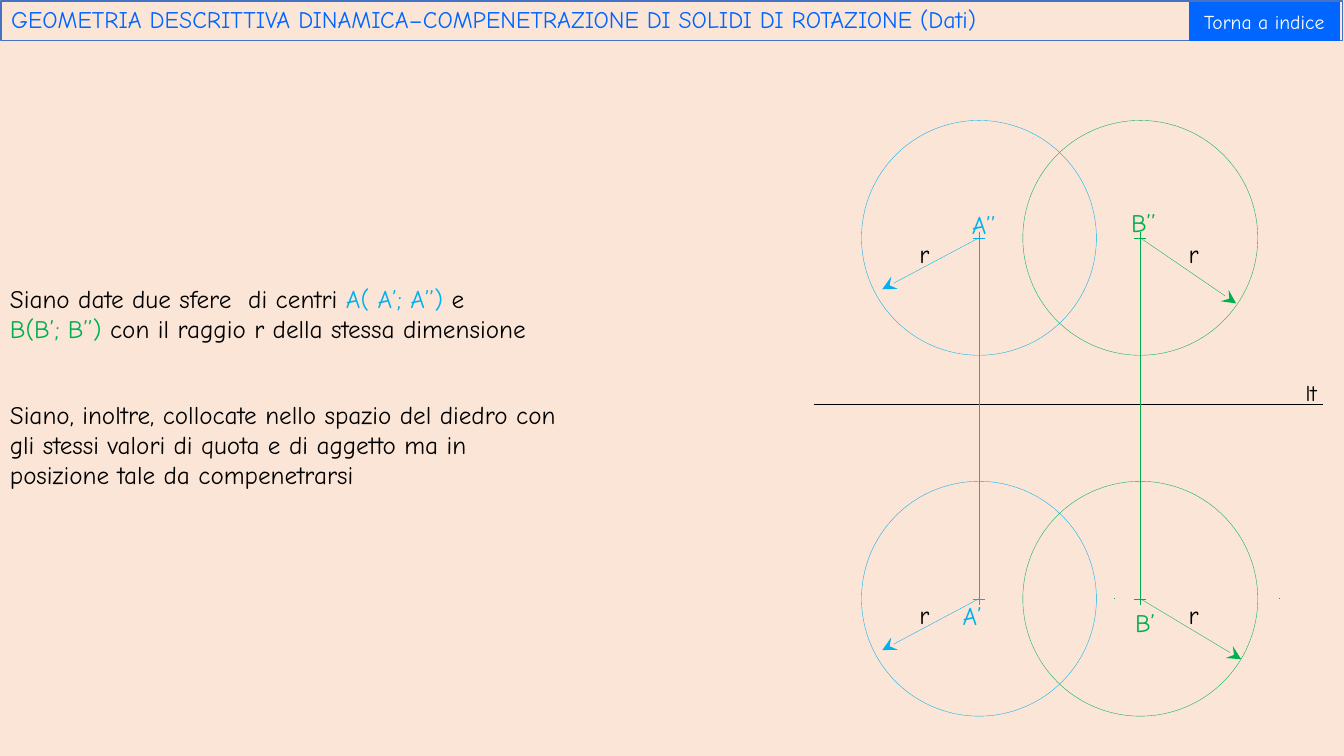
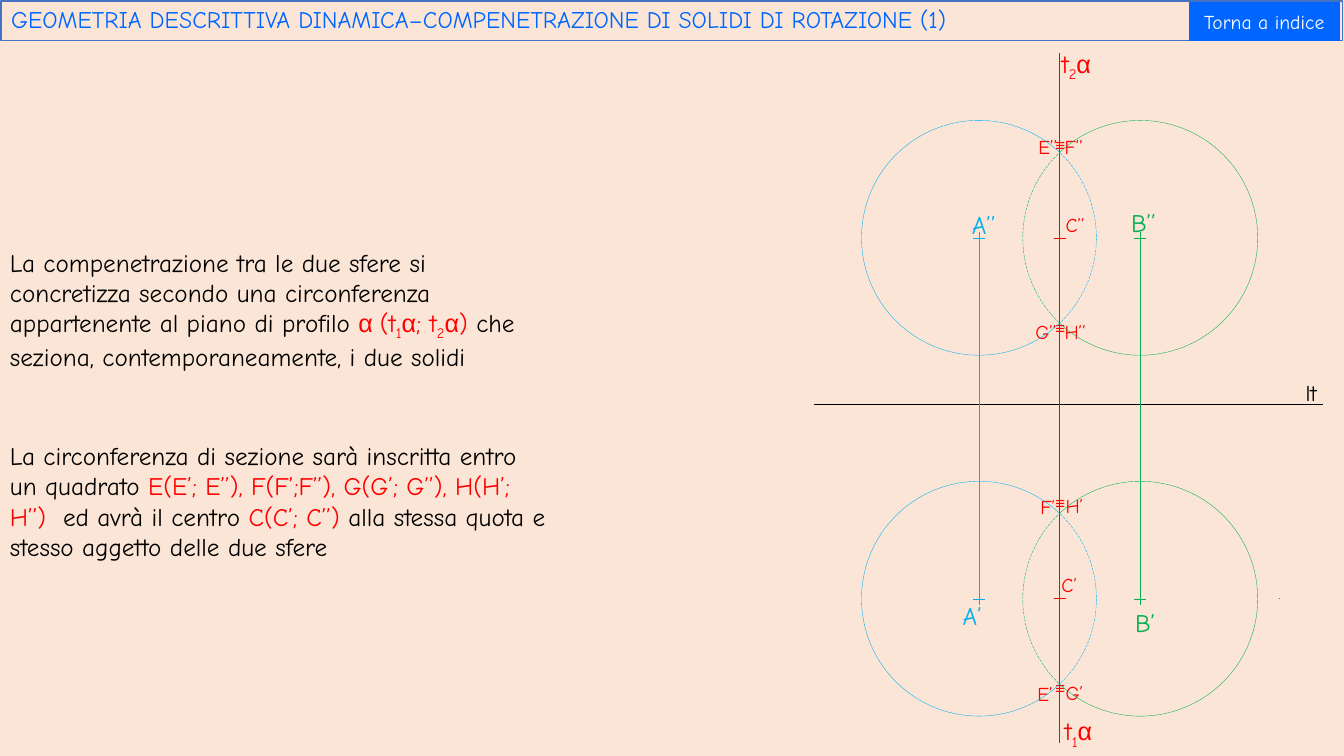
import lxml.etree
import pptx
import pptx.dml.color
import pptx.enum.dml
import pptx.enum.shapes
import pptx.enum.text
import pptx.oxml.ns
import pptx.util

Inches = pptx.util.Inches
SHAPES = pptx.enum.shapes.MSO_SHAPE
COLORS = {
    "paper": "FBE5D6", "ink": "000000", "white": "FFFFFF", "frame": "4472C4",
    "title": "0066FF", "sphere_a": "00B0F0", "sphere_b": "00B050", "section": "FF0000",
}
FONT = "Comic Neue"
SYMBOL_FONT = "Arial"
HEADING = "GEOMETRIA DESCRITTIVA DINAMICA–COMPENETRAZIONE DI SOLIDI DI ROTAZIONE ({})"

# The diagram is measured from its own left top corner.
DIAGRAM = (8, 0.4)
ROWS = {"elevation": 1.96, "plan": 5.54}
CENTERS = {"sphere_a": 1.71, "sphere_b": 3.31}
SECTION_X = 2.51
DIAMETER = 2.33
CHORD_HALF = 0.84
CHORD_ANGLE = 46
CENTER_LABELS = [
    ("A’’", "sphere_a", 1.54, 1.63), ("A’", "sphere_a", 1.45, 5.51),
    ("B’’", "sphere_b", 3.12, 1.61), ("B’", "sphere_b", 3.16, 5.58),
]
SECTION_LABELS = [
    ("E’’", 2.2, 0.89), ("F’’", 2.46, 0.89), ("G’’", 2.17, 2.72), ("H’’", 2.46, 2.72),
    ("F’", 2.22, 4.46), ("H’", 2.47, 4.45), ("E’", 2.19, 6.32), ("G’", 2.47, 6.31),
    ("C’’", 2.47, 1.66), ("C’", 2.43, 5.23),
]
RADII = [
    ("sphere_a", "elevation", -0.96, 0.51), ("sphere_a", "plan", -0.96, 0.51),
    ("sphere_b", "elevation", 0.95, 0.65), ("sphere_b", "plan", 1, 0.6),
]
RADIUS_LABEL_DX = {"sphere_a": -0.69, "sphere_b": 0.38}


def rgb(key):
    return pptx.dml.color.RGBColor.from_string(COLORS[key])


def write_runs(paragraph, runs, size=18, color="ink", font=FONT):
    """Write runs, each a string or a (text, format overrides) pair."""
    for item in runs:
        text, style = (item, {}) if isinstance(item, str) else item
        run = paragraph.add_run()
        run.text = text
        run.font.size = pptx.util.Pt(size)
        run.font.name = style.get("font", font)
        run.font.color.rgb = rgb(style.get("color", color))
        if style.get("subscript"):
            run._r.get_or_add_rPr().set("baseline", "-25000")


def add_text(slide, left, top, width, height, paragraphs, **style):
    box = slide.shapes.add_textbox(Inches(left), Inches(top), Inches(width), Inches(height))
    frame = box.text_frame
    frame.word_wrap = True
    frame.auto_size = pptx.enum.text.MSO_AUTO_SIZE.SHAPE_TO_FIT_TEXT
    for index, runs in enumerate(paragraphs):
        paragraph = frame.add_paragraph() if index else frame.paragraphs[0]
        write_runs(paragraph, runs, **style)


def add_line(slide, origin, start, end, color, width=0.25, arrow=False):
    """Draw a line between two points measured from origin."""
    points = [Inches(base + part) for point in (start, end) for base, part in zip(origin, point)]
    line = slide.shapes.add_connector(pptx.enum.shapes.MSO_CONNECTOR.STRAIGHT, *points)
    line.line.color.rgb = rgb(color)
    line.line.width = pptx.util.Pt(width)
    properties = line._element.spPr
    qn = pptx.oxml.ns.qn
    if arrow:
        lxml.etree.SubElement(properties.find(qn("a:ln")), qn("a:tailEnd"),
                              type="stealth", w="lg", len="lg")
    lxml.etree.SubElement(properties, qn("a:effectLst"))


def add_label(slide, origin, left, top, runs, width=0.54, height=0.4, **style):
    add_text(slide, origin[0] + left, origin[1] + top, width, height, [runs], **style)


def add_cross(slide, origin, x, y, color):
    arm = 0.06
    add_line(slide, origin, (x - arm, y), (x + arm, y), color)
    add_line(slide, origin, (x, y - arm), (x, y + arm), color)


def add_curve(slide, origin, x, y, color, angles=None, dashed=False):
    """Draw a circle centred on x, y, or its arc between two angles in degrees."""
    kind = SHAPES.ARC if angles else SHAPES.OVAL
    curve = slide.shapes.add_shape(
        kind, Inches(origin[0] + x - DIAMETER / 2), Inches(origin[1] + y - DIAMETER / 2),
        Inches(DIAMETER), Inches(DIAMETER))
    curve.shadow.inherit = False
    curve.fill.background()
    curve.line.color.rgb = rgb(color)
    curve.line.width = pptx.util.Pt(0.25)
    if dashed:
        curve.line.dash_style = pptx.enum.dml.MSO_LINE.LONG_DASH
    for index, angle in enumerate(angles or ()):
        curve.adjustments[index] = angle * 0.6


def add_projections(slide, origin):
    """Draw the ground line, the centres and the lines that join their projections."""
    add_line(slide, origin, (0.07, 3.61), (5.12, 3.61), "ink")
    add_label(slide, origin, 4.85, 3.31, ["lt"], width=0.48, height=0.37, size=16)
    add_line(slide, origin, (4.69, 5.54), (4.7, 5.54), "frame", width=0.5)
    for sphere, x in CENTERS.items():
        add_line(slide, origin, (x, ROWS["elevation"]), (x, ROWS["plan"]), sphere)
        for y in ROWS.values():
            add_cross(slide, origin, x, y, sphere)
    for text, sphere, left, top in CENTER_LABELS:
        add_label(slide, origin, left, top, [text], color=sphere)


def add_whole_spheres(slide, origin):
    for sphere, x in CENTERS.items():
        for y in ROWS.values():
            add_curve(slide, origin, x, y, sphere)
    for sphere, row, dx, dy in RADII:
        x, y = CENTERS[sphere], ROWS[row]
        add_line(slide, origin, (x, y), (x + dx, y + dy), sphere, arrow=True)
        add_label(slide, origin, x + RADIUS_LABEL_DX[sphere], y - 0.04, ["r"], width=0.33)
    add_line(slide, origin, (3.05, 5.54), (3.06, 5.54), "sphere_b", width=0.5)


def add_cut_spheres(slide, origin):
    """Draw each sphere with its hidden arc, inside the other one, dashed."""
    for sphere, facing in (("sphere_a", 0), ("sphere_b", 180)):
        near, far = facing - CHORD_ANGLE, facing + CHORD_ANGLE
        near, far = near % 360, far % 360
        for y in ROWS.values():
            add_curve(slide, origin, CENTERS[sphere], y, sphere, angles=(far, near))
            add_curve(slide, origin, CENTERS[sphere], y, sphere, angles=(near, far), dashed=True)


def plane_trace(number):
    return ["t", (number, {"subscript": True}), ("α", {"font": SYMBOL_FONT})]


def add_section_plane(slide, origin):
    add_line(slide, origin, (SECTION_X, 0.13), (SECTION_X, 6.97), "section")
    for number, left, top in (("1", 2.46, 6.65), ("2", 2.43, 0.03)):
        add_label(slide, origin, left, top, plane_trace(number), width=0.79, color="section")
    for y in ROWS.values():
        add_line(slide, origin, (SECTION_X, y - CHORD_HALF), (SECTION_X, y + CHORD_HALF),
                 "section", width=1)
        add_line(slide, origin, (SECTION_X - 0.06, y), (SECTION_X + 0.06, y),
                 "section", width=0.5)
    for text, left, top in SECTION_LABELS:
        add_label(slide, origin, left, top, [text], width=0.5, height=0.34,
                  size=14, color="section")
    for top in (0.89, 2.7, 4.44, 6.27):
        add_label(slide, origin, 2.37, top, ["≡"], width=0.34, height=0.3,
                  size=12, color="section", font=SYMBOL_FONT)


def place_heading(slide, step):
    title = slide.shapes.title
    title.left, title.top, title.width, title.height = map(Inches, (0.01, 0.01, 13.31, 0.39))
    title.line.color.rgb = rgb("frame")
    title.line.width = pptx.util.Pt(0.75)
    frame = title.text_frame
    frame.auto_size = pptx.enum.text.MSO_AUTO_SIZE.NONE
    frame.vertical_anchor = pptx.enum.text.MSO_ANCHOR.MIDDLE
    paragraph = frame.paragraphs[0]
    paragraph.alignment = pptx.enum.text.PP_ALIGN.LEFT
    paragraph.line_spacing = 0.9
    write_runs(paragraph, [HEADING.format(step)], size=17, color="title")


def add_index_button(slide):
    button = slide.shapes.add_shape(SHAPES.ACTION_BUTTON_CUSTOM, Inches(11.79), Inches(0.02),
                                    Inches(1.5), Inches(0.39))
    button.shadow.inherit = False
    button.fill.solid()
    button.fill.fore_color.rgb = rgb("title")
    button.line.fill.background()
    button.text_frame.vertical_anchor = pptx.enum.text.MSO_ANCHOR.MIDDLE
    paragraph = button.text_frame.paragraphs[0]
    paragraph.alignment = pptx.enum.text.PP_ALIGN.CENTER
    write_runs(paragraph, ["Torna a indice"], size=14, color="white")


def add_step(prs, step):
    """Add a slide with the shared heading, button and projections."""
    slide = prs.slides.add_slide(prs.slide_layouts.get_by_name("Title Only"))
    place_heading(slide, step)
    add_index_button(slide)
    add_projections(slide, DIAGRAM)
    return slide


def add_data_slide(prs):
    slide = add_step(prs, "Dati")
    add_whole_spheres(slide, DIAGRAM)
    add_text(slide, 0, 2.76, 5.89, 0.71, [
        ["Siano date due sfere  di centri ", ("A( A’; A’’) ", {"color": "sphere_a"}), "e"],
        [("B(B’; B’’) ", {"color": "sphere_b"}), "con il raggio r della stessa dimensione"],
    ])
    add_text(slide, 0, 3.91, 5.64, 1.01, [[
        "Siano, inoltre, collocate nello spazio del diedro con gli stessi valori di quota "
        "e di aggetto ma in posizione tale da compenetrarsi"]])


def add_section_slide(prs):
    slide = add_step(prs, "1")
    add_section_plane(slide, DIAGRAM)
    add_cut_spheres(slide, DIAGRAM)
    plane = [("α ", {"font": SYMBOL_FONT}), "(", *plane_trace("1"), "; ", *plane_trace("2"), ")"]
    add_text(slide, 0, 2.4, 5.55, 1.31, [[
        ("La compenetrazione tra le due sfere si concretizza secondo una circonferenza "
         "appartenente al piano di profilo ", {"color": "ink"}),
        *plane,
        (" che seziona, contemporaneamente, i due solidi", {"color": "ink"}),
    ]], color="section")
    add_text(slide, 0, 4.32, 5.55, 1.31, [[
        "La circonferenza di sezione sarà inscritta entro un quadrato ",
        ("E(E’; E’’), F(F’;F’’), G(G’; G’’), H(H’; H’’)  ", {"color": "section"}),
        "ed avrà il centro ",
        ("C(C’; C’’) ", {"color": "section"}),
        "alla stessa quota e stesso aggetto delle due sfere",
    ]])


def main():
    prs = pptx.Presentation()
    prs.slide_width, prs.slide_height = Inches(13.33), Inches(7.5)
    background = prs.slide_master.background.fill
    background.solid()
    background.fore_color.rgb = rgb("paper")
    add_data_slide(prs)
    add_section_slide(prs)
    prs.save("out.pptx")


if __name__ == "__main__":
    main()
